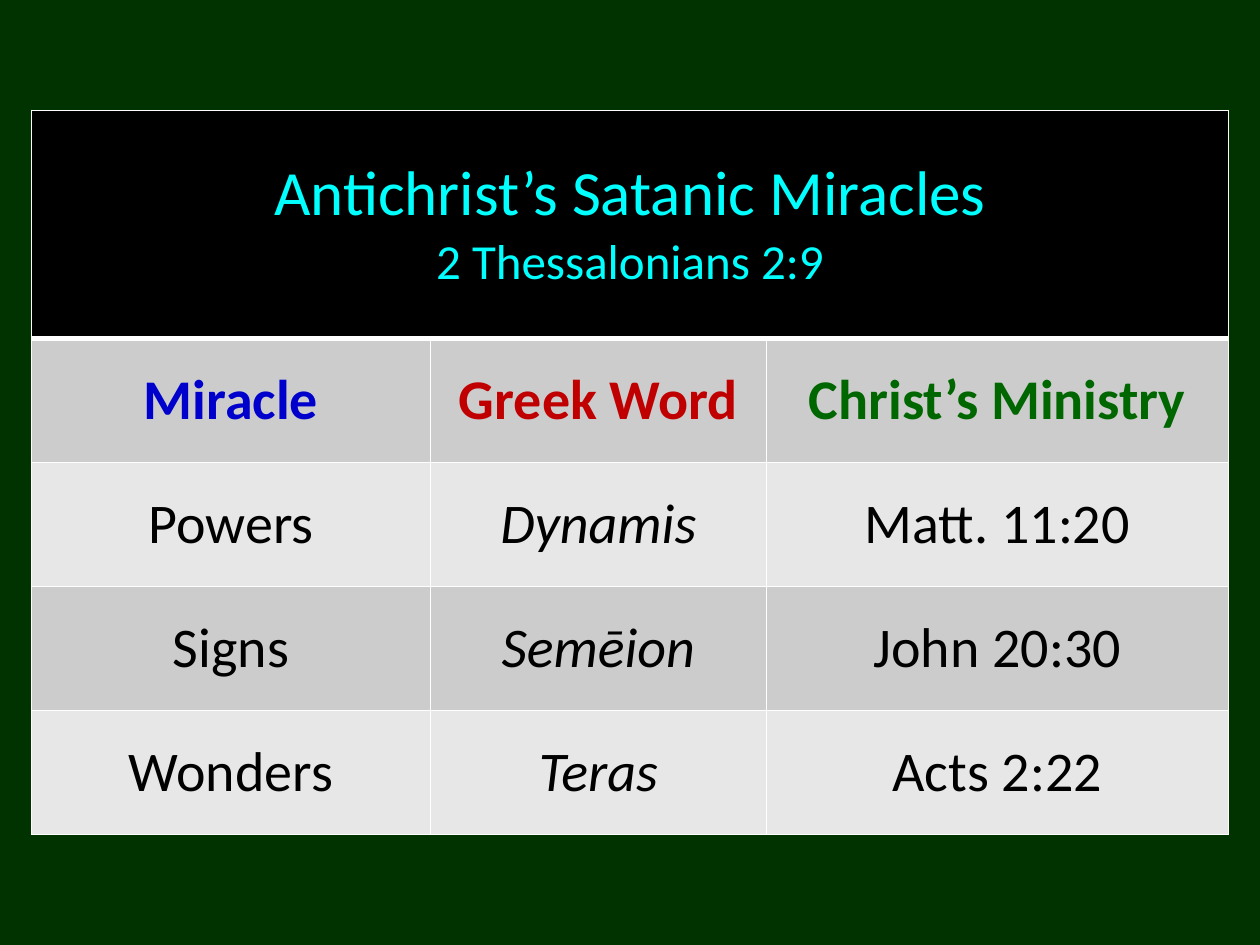
from lxml import etree
from pptx import Presentation
from pptx.dml.color import RGBColor
from pptx.enum.text import MSO_ANCHOR, PP_ALIGN
from pptx.oxml.ns import qn
from pptx.util import Pt

CENTER = PP_ALIGN.CENTER
MIDDLE = MSO_ANCHOR.MIDDLE

DARK_GREEN = RGBColor(0x00, 0x33, 0x00)
BLACK = RGBColor(0x00, 0x00, 0x00)
WHITE = RGBColor(0xFF, 0xFF, 0xFF)
CYAN = RGBColor(0x00, 0xFF, 0xFF)
BLUE = RGBColor(0x00, 0x00, 0xCC)
RED = RGBColor(0xC0, 0x00, 0x00)
GREEN = RGBColor(0x00, 0x66, 0x00)
BANDS = (RGBColor(0xCC, 0xCC, 0xCC), RGBColor(0xE7, 0xE7, 0xE7))

FONT = "Calibri"
COL_WIDTHS = (228, 192, 264)
TITLE_HEIGHT, ROW_HEIGHT = 130.4, 70.9
THIN, THICK = 1, 3

TITLE_LINES = (("Antichrist’s Satanic Miracles", 36), ("2 Thessalonians 2:9", 28))
HEADINGS = (("Miracle", BLUE), ("Greek Word", RED), ("Christ’s Ministry", GREEN))
MIRACLES = (
    ("Powers", "Dynamis", "Matt. 11:20"),
    ("Signs", "Semēion", "John 20:30"),
    ("Wonders", "Teras", "Acts 2:22"),
)


def add_run(p, text, size, color, **font):
    p.alignment = CENTER
    r = p.add_run()
    r.text = text
    r.font.color.rgb = color
    for name, value in {"name": FONT, "size": Pt(size), **font}.items():
        setattr(r.font, name, value)


def set_borders(cell, top=THIN, bottom=THIN):
    tcPr = cell._tc.get_or_add_tcPr()
    for side, width in {"L": THIN, "R": THIN, "T": top, "B": bottom}.items():
        ln = etree.SubElement(tcPr, qn(f"a:ln{side}"), w=str(Pt(width)))
        fill = etree.SubElement(ln, qn("a:solidFill"))
        etree.SubElement(fill, qn("a:srgbClr"), val=str(WHITE))


def format_cell(cell, color, **borders):
    set_borders(cell, **borders)
    cell.fill.solid()
    cell.fill.fore_color.rgb = color
    cell.vertical_anchor = MIDDLE


def add_grid(s):
    rows = len(MIRACLES) + 2
    height = TITLE_HEIGHT + (rows - 1) * ROW_HEIGHT
    table = s.shapes.add_table(rows, len(COL_WIDTHS), Pt(18), Pt(63),
                               Pt(sum(COL_WIDTHS)), Pt(height)).table
    for col, width in zip(table.columns, COL_WIDTHS):
        col.width = Pt(width)
    for i, row in enumerate(table.rows):
        row.height = Pt(ROW_HEIGHT if i else TITLE_HEIGHT)
    return table


def fill_title(table):
    for cell in table.rows[0].cells:
        format_cell(cell, BLACK, bottom=THICK)
    title = table.cell(0, 0)
    title.merge(table.cell(0, len(COL_WIDTHS) - 1))
    tf = title.text_frame
    for i, (text, size) in enumerate(TITLE_LINES):
        p = tf.add_paragraph() if i else tf.paragraphs[0]
        add_run(p, text, size, CYAN)


def fill_headings(table):
    for cell, (text, color) in zip(table.rows[1].cells, HEADINGS):
        format_cell(cell, BANDS[0], top=THICK)
        add_run(cell.text_frame.paragraphs[0], text, 32, color, bold=True)


def fill_miracles(table):
    for i, texts in enumerate(MIRACLES, start=1):
        for j, text in enumerate(texts):
            cell = table.cell(i + 1, j)
            format_cell(cell, BANDS[i % 2])
            # Greek words are in italics
            add_run(cell.text_frame.paragraphs[0], text, 32, BLACK,
                    bold=False, italic=j == 1)


def main():
    prs = Presentation()
    prs.slide_width, prs.slide_height = Pt(720), Pt(540)
    s = prs.slides.add_slide(prs.slide_layouts[6])

    # Background
    s.background.fill.solid()
    s.background.fill.fore_color.rgb = DARK_GREEN

    # Table of miracles
    table = add_grid(s)
    fill_title(table)
    fill_headings(table)
    fill_miracles(table)
    prs.save("out.pptx")


if __name__ == "__main__":
    main()
